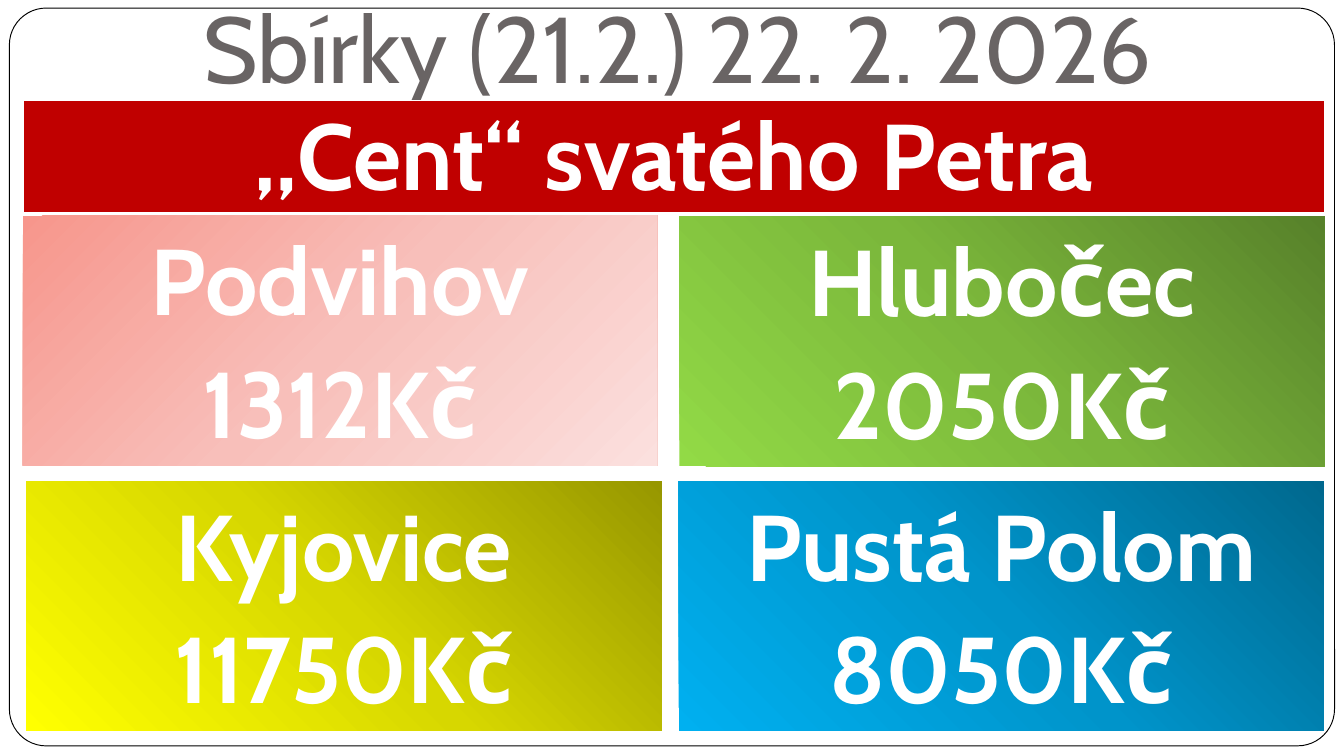
from dataclasses import dataclass

from pptx import Presentation
from pptx.dml.color import RGBColor
from pptx.enum.shapes import MSO_SHAPE
from pptx.enum.text import MSO_ANCHOR, PP_ALIGN
from pptx.oxml import parse_xml
from pptx.oxml.ns import nsdecls, qn
from pptx.util import Inches, Pt

RECT = MSO_SHAPE.RECTANGLE
ROUNDED = MSO_SHAPE.ROUNDED_RECTANGLE
TOP, MIDDLE, BOTTOM = MSO_ANCHOR.TOP, MSO_ANCHOR.MIDDLE, MSO_ANCHOR.BOTTOM
CENTER = PP_ALIGN.CENTER

WIDTH = 10
HEIGHT = WIDTH * 9 / 16
CELL = WIDTH / 100
FONT = "Cabin"
COLORS = {"white": "FFFFFF", "black": "000000", "title": "696464", "banner": "C00000"}
GRADIENTS = {
    "pink": ("F7968C", "F8BFBA", "FBE0DE"),
    "green": ("57812A", "7BB73B", "92DA46"),
    "yellow": ("979700", "D7D700", "FFFF00"),
    "blue": ("00688E", "0094CA", "00B0F0"),
}
LINEAR = '<a:lin ang="2700000" scaled="0"/>'
FROM_TOP_RIGHT = '<a:path path="circle"><a:fillToRect l="100000" b="100000"/></a:path>'


@dataclass(frozen=True)
class Area:
    col: float
    row: float
    cols: float
    rows: float

    def emu(self) -> list[int]:
        return [Inches(n * CELL) for n in (self.col, self.row, self.cols, self.rows)]


@dataclass(frozen=True)
class Parish:
    name: str
    amount: str
    area: Area
    gradient: str
    direction: str = FROM_TOP_RIGHT


PARISHES = [
    Parish("Podvihov", "1312Kč", Area(1.7, 16.05, 47.2, 18.6), "pink", LINEAR),
    Parish("Hlubočec", "2050Kč", Area(50.55, 16.1, 48, 18.6), "green"),
    Parish("Kyjovice", "11750Kč", Area(1.95, 35.8, 47.3, 18.6), "yellow"),
    Parish("Pustá Polom", "8050Kč", Area(50.5, 35.8, 48, 18.6), "blue"),
]


def rgb(name: str) -> RGBColor:
    return RGBColor.from_string(COLORS[name])


def add_box(slide, area: Area, kind=RECT, fill="white", line=None, line_pt=0.75):
    sp = slide.shapes.add_shape(kind, *area.emu())
    sp.shadow.inherit = False
    sp.fill.solid()
    sp.fill.fore_color.rgb = rgb(fill)
    if line:
        sp.line.color.rgb = rgb(line)
        sp.line.width = Pt(line_pt)
    else:
        sp.line.fill.background()
    return sp


def set_gradient(sp, colors: tuple[str, ...], direction: str) -> None:
    stops = "".join(
        f'<a:gs pos="{i * 50000}"><a:srgbClr val="{c}"/></a:gs>' for i, c in enumerate(colors)
    )
    grad = parse_xml(
        f'<a:gradFill {nsdecls("a")} rotWithShape="1"><a:gsLst>{stops}</a:gsLst>{direction}</a:gradFill>'
    )
    solid = sp.fill._xPr.find(qn("a:solidFill"))
    solid.getparent().replace(solid, grad)


def write(sp, lines: list[str], anchor, color="white", bold=True, bottom=0.1) -> None:
    tf = sp.text_frame
    tf.word_wrap = True
    tf.vertical_anchor = anchor
    tf.margin_left = tf.margin_right = Inches(0.1)
    tf.margin_top, tf.margin_bottom = Inches(0.05), Inches(bottom)
    for i, line in enumerate(lines):
        p = tf.add_paragraph() if i else tf.paragraphs[0]
        p.alignment = CENTER
        if i:
            p.space_before = Pt(5.8)
        r = p.add_run()
        r.text = line
        r.font.name = FONT
        r.font.size = Pt(50)
        r.font.bold = bold
        r.font.color.rgb = rgb(color)


def add_parish(slide, parish: Parish) -> None:
    sp = add_box(slide, parish.area)
    set_gradient(sp, GRADIENTS[parish.gradient], parish.direction)
    write(sp, [parish.name, parish.amount], TOP, bottom=0.05)


def main() -> None:
    prs = Presentation()
    prs.slide_width, prs.slide_height = Inches(WIDTH), Inches(HEIGHT)
    slide = prs.slides.add_slide(prs.slide_layouts[6])

    frame = add_box(slide, Area(0.7, 0.6, 98.6, 54.9), ROUNDED, line="black", line_pt=0.5)
    frame.adjustments[0] = 0.05

    title = slide.shapes.add_textbox(*Area(2, 0, 96.9, 8.6).emu())
    write(title, ["Sbírky (21.2.) 22. 2. 2026"], BOTTOM, "title", bold=False)

    for parish in PARISHES:
        add_parish(slide, parish)

    banner = add_box(slide, Area(1.7, 7.5, 96.9, 8.3), fill="banner", line="white")
    write(banner, ["„Cent“ svatého Petra"], MIDDLE)

    prs.save("out.pptx")


if __name__ == "__main__":
    main()
